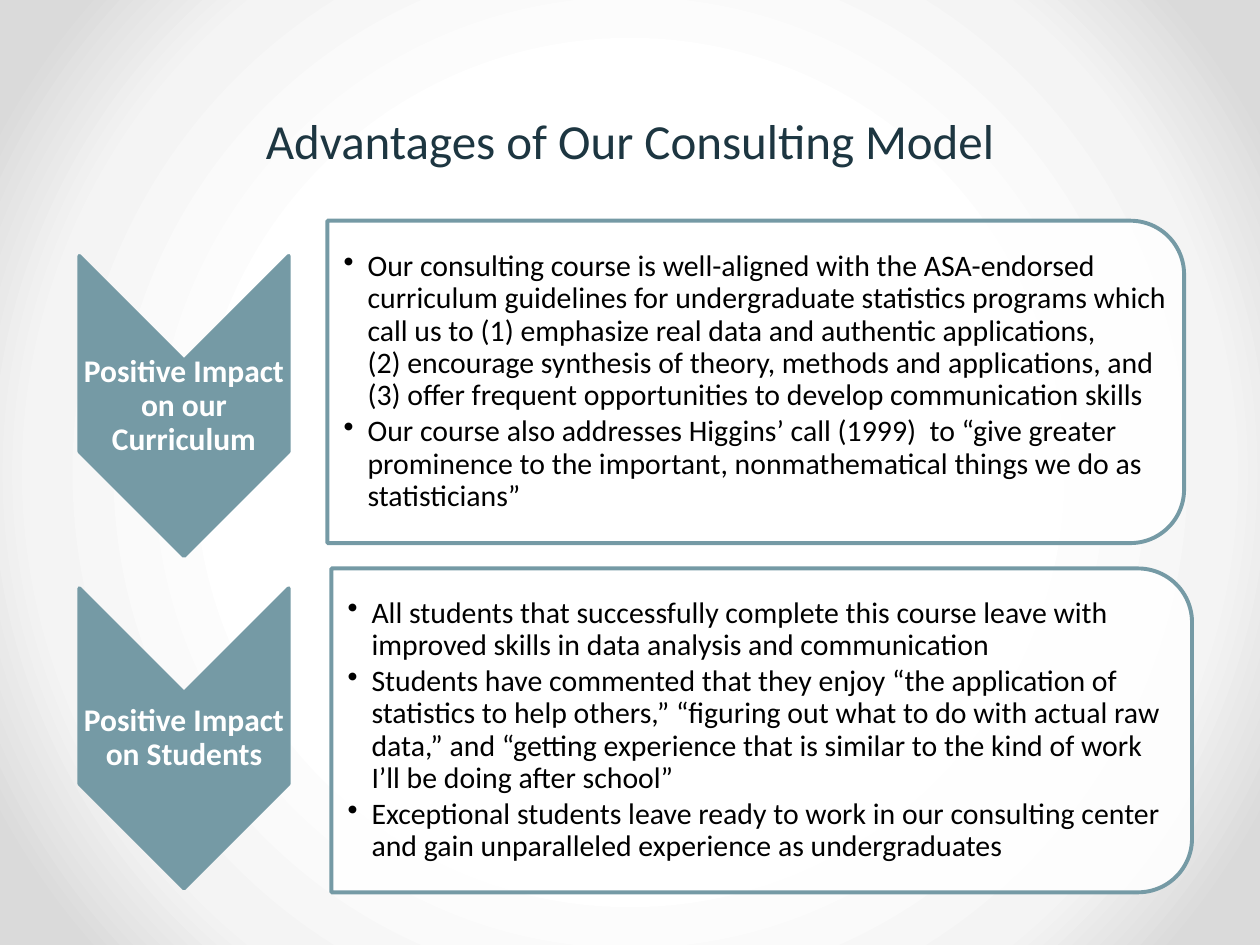
from dataclasses import dataclass

from pptx import Presentation
from pptx.dml.color import RGBColor
from pptx.enum.shapes import MSO_SHAPE as Shp
from pptx.enum.text import MSO_ANCHOR as Anchor, PP_ALIGN as Align
from pptx.oxml import parse_xml
from pptx.oxml.ns import nsdecls
from pptx.oxml.xmlchemy import OxmlElement as Element
from pptx.util import Cm, Pt

COLORS = {"title": "1D3641", "teal": "759AA5", "white": "FFFFFF", "black": "000000"}
BACKGROUND_STOPS = [(50, "FFFFFF"), (76, "F4F4F4"), (92, "DADADA")]
TITLE = {"size": Pt(28), "name": "Calibri"}
LABEL = {"size": Pt(18), "name": "Calibri", "bold": True}
BODY = {"size": Pt(17), "name": "Calibri"}
TIGHT = {"margin_left": Cm(0.03), "margin_right": Cm(0.03),
         "margin_top": Cm(0.03), "margin_bottom": Cm(0.03),
         "vertical_anchor": Anchor.MIDDLE}


@dataclass
class Box:
    """Visible frame in centimetres."""
    left: float
    top: float
    width: float
    height: float


@dataclass
class Impact:
    label: str
    chevron: Box
    panel: Box
    points: list[str]


IMPACTS = [
    Impact("Positive Impact on our Curriculum",
           Box(1.6, 5.16, 4.22, 6.05), Box(6.6, 4.45, 17.27, 6.5), [
               "Our consulting course is well-aligned with the ASA-endorsed curriculum "
               "guidelines for undergraduate statistics programs which call us to "
               "(1) emphasize real data and authentic applications, \v"
               "(2) encourage synthesis of theory, methods and applications, and "
               "(3) offer frequent opportunities to develop communication skills",
               "Our course also addresses Higgins’ call (1999)  to “give greater "
               "prominence to the important, nonmathematical things we do as "
               "statisticians”"]),
    Impact("Positive Impact on Students",
           Box(1.6, 11.86, 4.22, 6.05), Box(6.68, 11.46, 17.35, 6.53), [
               "All students that successfully complete this course leave with "
               "improved skills in data analysis and communication",
               "Students have commented that they enjoy “the application of statistics "
               "to help others,” “figuring out what to do with actual raw data,” and "
               "“getting experience that is similar to the kind of work I’ll be doing "
               "after school”",
               "Exceptional students leave ready to work in our consulting center and "
               "gain unparalleled experience as undergraduates"]),
]


def set_all(target, values: dict) -> None:
    for name, value in values.items():
        setattr(target, name, value)


def set_background(s) -> None:
    s.background.fill.gradient()
    stops = "".join(f'<a:gs pos="{pos * 1000}"><a:srgbClr val="{color}"/></a:gs>'
                    for pos, color in BACKGROUND_STOPS)
    grad = parse_xml(
        f'<a:gradFill {nsdecls("a")} rotWithShape="1"><a:gsLst>{stops}</a:gsLst>'
        '<a:path path="circle"><a:fillToRect l="50000" t="50000" r="50000" b="50000"/>'
        '</a:path></a:gradFill>')
    old = s.element.xpath("p:cSld/p:bg/p:bgPr/a:gradFill")[0]
    old.getparent().replace(old, grad)


def add_turned(s, kind: Shp, box: Box, fill: str, opacity: int = 100) -> None:
    """Add a shape turned by 90 degrees that covers the visible box."""
    shift = (box.width - box.height) / 2
    sp = s.shapes.add_shape(kind, Cm(box.left + shift), Cm(box.top - shift),
                            Cm(box.height), Cm(box.width))
    sp.rotation = 90
    sp.shadow.inherit = False
    sp.fill.solid()
    sp.fill.fore_color.rgb = RGBColor.from_string(COLORS[fill])
    if opacity < 100:
        alpha = Element("a:alpha")
        alpha.set("val", str(opacity * 1000))
        sp.element.spPr.xpath("a:solidFill/a:srgbClr")[0].append(alpha)
    sp.line.color.rgb = RGBColor.from_string(COLORS["teal"])
    sp.line.width = Pt(2.25)
    sp.line._get_or_add_ln().append(Element("a:round"))


def add_bullet(p) -> None:
    pPr = p._p.get_or_add_pPr()
    pPr.set("marL", str(Cm(0.48)))
    pPr.set("indent", str(-Cm(0.48)))
    bullet = Element("a:buChar")
    bullet.set("char", "•")
    pPr.append(bullet)


def add_text(s, box: Box, texts: list[str], font: dict, color: str, frame: dict,
             para: dict, bulleted: bool = False) -> None:
    sp = s.shapes.add_textbox(Cm(box.left), Cm(box.top), Cm(box.width), Cm(box.height))
    tf = sp.text_frame
    set_all(tf, {"word_wrap": True} | frame)
    for i, text in enumerate(texts):
        p = tf.add_paragraph() if i else tf.paragraphs[0]
        p.text = text
        set_all(p, para)
        if bulleted:
            add_bullet(p)
        for r in p.runs:
            set_all(r.font, font)
            r.font.color.rgb = RGBColor.from_string(COLORS[color])
        # Line breaks take the size of the text around them
        for br in p._p.xpath("a:br"):
            rPr = Element("a:rPr")
            rPr.set("sz", str(int(font["size"].pt * 100)))
            br.append(rPr)


def add_impact(s, item: Impact) -> None:
    # Chevron with its label
    c = item.chevron
    add_turned(s, Shp.CHEVRON, c, "teal")
    label_height = 1.8
    label = Box(c.left, c.top + (c.height - label_height) / 2, c.width, label_height)
    add_text(s, label, [item.label], LABEL, "white", TIGHT,
             {"alignment": Align.CENTER, "line_spacing": 0.9})
    # Panel with its points
    b = item.panel
    add_turned(s, Shp.ROUND_2_SAME_RECTANGLE, b, "white", 90)
    inner = Box(b.left, b.top + 0.32, b.width - 0.32, b.height - 0.64)
    add_text(s, inner, item.points, BODY, "black", TIGHT | {"margin_left": Cm(0.33)},
             {"line_spacing": 0.9, "space_after": Pt(2.55)}, bulleted=True)


def main() -> None:
    prs = Presentation()
    prs.slide_width, prs.slide_height = Cm(25.4), Cm(19.05)
    s = prs.slides.add_slide(prs.slide_layouts[6])
    set_background(s)
    add_text(s, Box(1.27, 2.11, 22.86, 1.45), [TITLE_TEXT], TITLE, "title", {},
             {"alignment": Align.CENTER})
    for item in IMPACTS:
        add_impact(s, item)
    prs.save("out.pptx")


TITLE_TEXT = "Advantages of Our Consulting Model"

if __name__ == "__main__":
    main()
